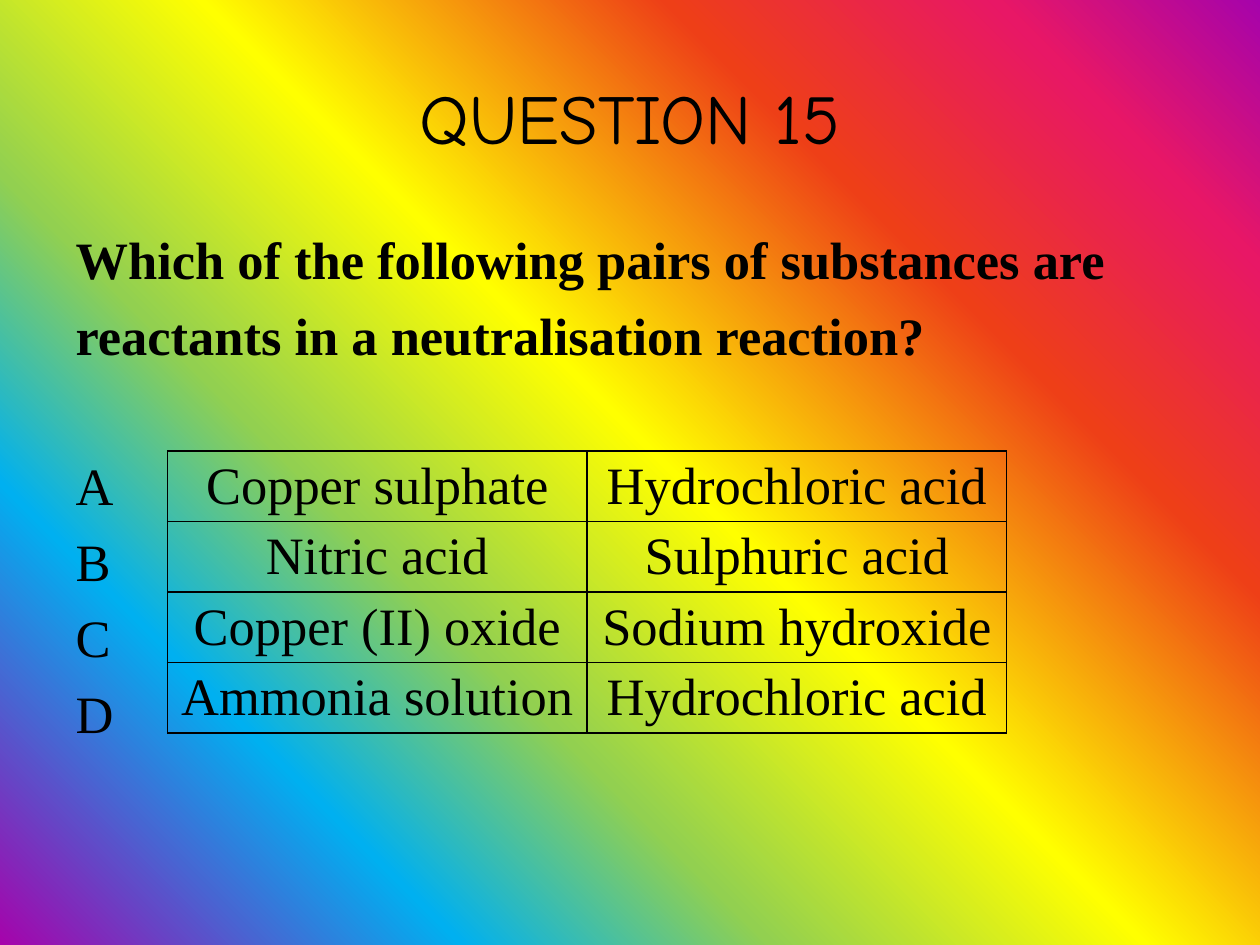
from pptx import Presentation
from pptx.dml.color import RGBColor
from pptx.enum.text import MSO_ANCHOR, MSO_AUTO_SIZE, PP_ALIGN
from pptx.oxml import parse_xml
from pptx.oxml.ns import nsdecls
from pptx.util import Inches, Pt

BLACK = RGBColor(0x00, 0x00, 0x00)
PURPLE = RGBColor(0xA6, 0x03, 0xAB)
RAINBOW = [
    (0, PURPLE),
    (21, RGBColor(0x00, 0xB0, 0xF0)),
    (35, RGBColor(0x92, 0xD0, 0x50)),
    (52, RGBColor(0xFF, 0xFF, 0x00)),
    (73, RGBColor(0xEE, 0x3F, 0x17)),
    (88, RGBColor(0xE8, 0x17, 0x66)),
    (100, PURPLE),
]
QUESTION = [
    "Which of the following pairs of substances are",
    "reactants in a neutralisation reaction?",
]
ANSWERS = {
    "A": ("Copper sulphate", "Hydrochloric acid"),
    "B": ("Nitric acid", "Sulphuric acid"),
    "C": ("Copper (II) oxide", "Sodium hydroxide"),
    "D": ("Ammonia solution", "Hydrochloric acid"),
}
COLUMN_WIDTH = Inches(3.33)
ROW_HEIGHT = Inches(0.56)
LINE_GAP = 7.5
ANSWER_GAP = 49.5


def write(paragraph, text, font="Times New Roman", size=30, bold=False,
          align=PP_ALIGN.LEFT, before=0):
    paragraph.alignment = align
    paragraph.space_before = Pt(before)
    run = paragraph.add_run()
    run.text = text
    run.font.name = font
    run.font.size = Pt(size)
    run.font.bold = bold
    run.font.color.rgb = BLACK


def place(placeholder, left, top, width, height, anchor):
    placeholder.left, placeholder.top = Inches(left), Inches(top)
    placeholder.width, placeholder.height = Inches(width), Inches(height)
    frame = placeholder.text_frame
    frame.word_wrap = True
    frame.auto_size = MSO_AUTO_SIZE.NONE
    frame.vertical_anchor = anchor
    return frame


def paint_background(slide):
    stops = "".join(
        f'<a:gs pos="{position * 1000}"><a:srgbClr val="{colour}"/></a:gs>'
        for position, colour in RAINBOW
    )
    slide.element.cSld.insert(0, parse_xml(
        f'<p:bg {nsdecls("p", "a")}><p:bgPr><a:gradFill rotWithShape="1">'
        f'<a:gsLst>{stops}</a:gsLst><a:path path="circle">'
        '<a:fillToRect t="100000" r="100000"/></a:path></a:gradFill>'
        '<a:effectLst/></p:bgPr></p:bg>'
    ))


def add_title(slide):
    frame = place(slide.shapes.title, 0.5, 0.3, 9, 1.25, MSO_ANCHOR.MIDDLE)
    write(frame.paragraphs[0], "QUESTION 15", font="Comic Neue", size=40,
          align=PP_ALIGN.CENTER)


def add_question(slide):
    frame = place(slide.placeholders[1], 0.5, 1.75, 9, 4.95, MSO_ANCHOR.TOP)
    for index, text in enumerate([*QUESTION, *ANSWERS]):
        line = frame.add_paragraph() if index else frame.paragraphs[0]
        starts_answers = index == len(QUESTION)
        write(line, text, bold=index < len(QUESTION),
              before=ANSWER_GAP if starts_answers else LINE_GAP)
        properties = line._p.get_or_add_pPr()
        properties.set("marL", str(Inches(0.38)))
        properties.set("indent", str(-Inches(0.38)))
        properties.append(parse_xml(f'<a:buNone {nsdecls("a")}/>'))


def outline(cell):
    properties = cell._tc.get_or_add_tcPr()
    for position, side in enumerate(("lnL", "lnR", "lnT", "lnB")):
        properties.insert(position, parse_xml(
            f'<a:{side} {nsdecls("a")} w="{Pt(1)}"><a:solidFill>'
            f'<a:srgbClr val="{BLACK}"/></a:solidFill></a:{side}>'
        ))


def add_answers(slide):
    table = slide.shapes.add_table(
        len(ANSWERS), 2, Inches(1.33), Inches(3.58),
        COLUMN_WIDTH * 2, ROW_HEIGHT * len(ANSWERS),
    ).table
    table.first_row = table.horz_banding = False
    for column in table.columns:
        column.width = COLUMN_WIDTH
    for row, pair in zip(table.rows, ANSWERS.values()):
        row.height = ROW_HEIGHT
        for cell, substance in zip(row.cells, pair):
            cell.fill.background()
            cell.margin_left = cell.margin_right = Inches(0.05)
            cell.margin_top, cell.margin_bottom = Inches(0.05), Inches(0.03)
            write(cell.text_frame.paragraphs[0], substance,
                  align=PP_ALIGN.CENTER)
            outline(cell)


def main():
    deck = Presentation()
    deck.slide_width, deck.slide_height = Inches(10), Inches(7.5)
    slide = deck.slides.add_slide(deck.slide_layouts[1])
    paint_background(slide)
    add_title(slide)
    add_question(slide)
    add_answers(slide)
    deck.save("out.pptx")


if __name__ == "__main__":
    main()
